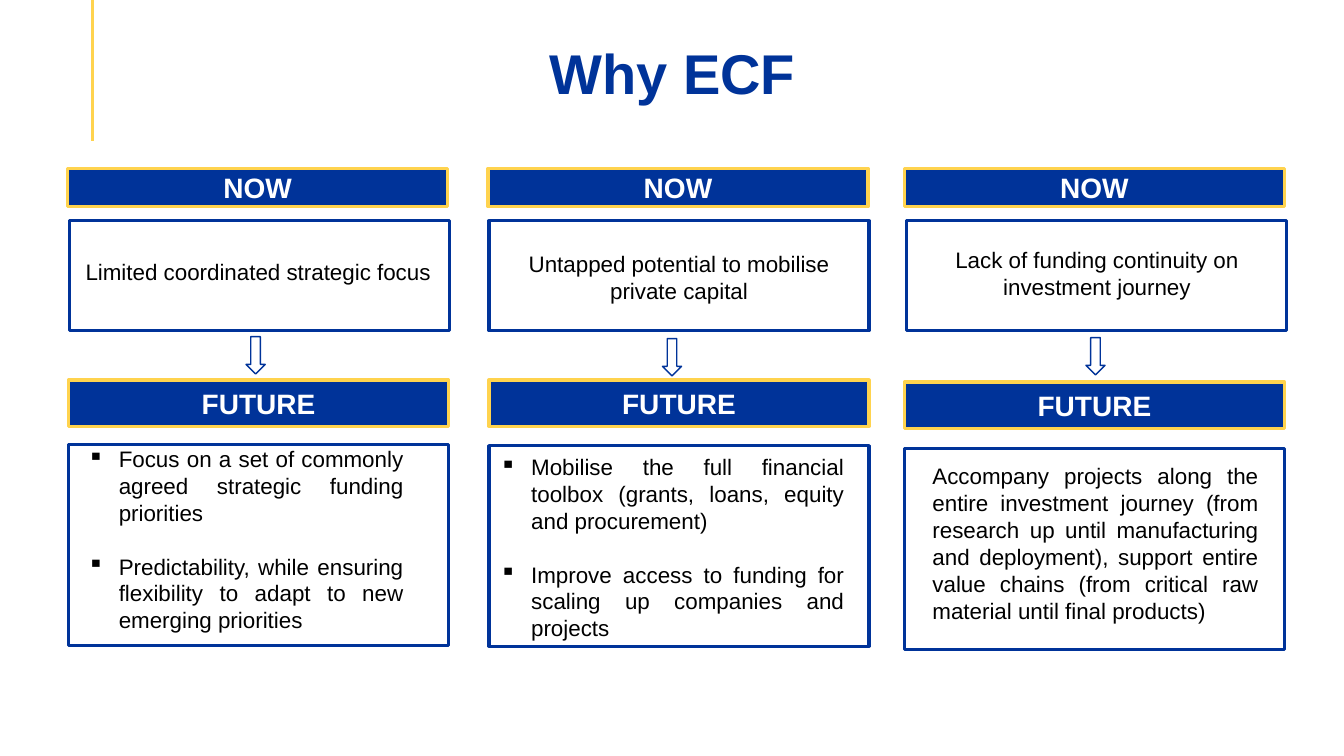
"""Build the "Why ECF" slide: three columns, each leading from now to future."""
import pptx
import pptx.util
import pptx.dml.color
import pptx.enum.shapes
import pptx.enum.text
import lxml.etree

BLUE = pptx.dml.color.RGBColor(0x00, 0x33, 0x99)
GOLD = pptx.dml.color.RGBColor(0xFF, 0xD3, 0x4E)
WHITE = pptx.dml.color.RGBColor(0xFF, 0xFF, 0xFF)
BLACK = pptx.dml.color.RGBColor(0x00, 0x00, 0x00)
RECT = pptx.enum.shapes.MSO_SHAPE.RECTANGLE
ARROW = pptx.enum.shapes.MSO_SHAPE.DOWN_ARROW
ALIGN = pptx.enum.text.PP_ALIGN
ANCHOR = pptx.enum.text.MSO_ANCHOR
FIT = pptx.enum.text.MSO_AUTO_SIZE
SCALE = 9144
WIDTH, HEIGHT = 1333, 750
BOX = 377


def px(*sizes):
    return [size * SCALE for size in sizes]


class Panel:
    def __init__(self, slide):
        self.slide = slide
        self.face = "Arial"

    def style(self, para, size, color, bold, align):
        para.alignment = align
        font = para.font
        font.name, font.size, font.bold = self.face, pptx.util.Pt(size), bold
        font.color.rgb = color

    def title(self, text, left, top, width, height):
        title = self.slide.shapes.title
        title.left, title.top, title.width, title.height = px(left, top, width, height)
        frame = title.text_frame
        frame.text = text
        frame.auto_size = FIT.NONE
        frame.vertical_anchor = ANCHOR.BOTTOM
        frame.margin_bottom = 0
        para = frame.paragraphs[0]
        para.line_spacing = 0.9
        self.style(para, 40, BLUE, True, ALIGN.LEFT)

    def rule(self, left, top, bottom):
        line = self.slide.shapes.add_connector(
            pptx.enum.shapes.MSO_CONNECTOR.STRAIGHT, *px(left, top, left, bottom))
        line.line.color.rgb = GOLD
        line.line.width = pptx.util.Pt(2.25)
        props = line._element.spPr
        lxml.etree.SubElement(props, pptx.oxml.ns.qn("a:effectLst"))

    def shape(self, kind, left, top, width, height, color=BLUE, weight=2.25):
        shape = self.slide.shapes.add_shape(kind, *px(left, top, width, height))
        shape.shadow.inherit = False
        shape.fill.background()
        shape.line.color.rgb = color
        shape.line.width = pptx.util.Pt(weight)
        return shape

    def banner(self, text, left, top, height):
        shape = self.shape(RECT, left, top, BOX, height, GOLD)
        shape.fill.solid()
        shape.fill.fore_color.rgb = BLUE
        frame = shape.text_frame
        frame.text = text
        frame.vertical_anchor = ANCHOR.MIDDLE
        self.style(frame.paragraphs[0], 20, WHITE, True, ALIGN.CENTER)

    def bullet(self, para):
        props = para._p.get_or_add_pPr()
        indent = 31 * SCALE
        props.set("marL", str(indent))
        props.set("indent", str(-indent))
        mark = lxml.etree.SubElement(props, pptx.oxml.ns.qn("a:buChar"))
        mark.set("char", "▪")

    def text(self, lines, left, top, width, height, align):
        box = self.slide.shapes.add_textbox(*px(left, top, width, height))
        frame = box.text_frame
        frame.word_wrap = True
        for rank, line in enumerate(lines):
            para = frame.paragraphs[0] if rank == 0 else frame.add_paragraph()
            para.text = line
            if rank:
                para.space_before = pptx.util.Pt(19)
            if len(lines) > 1:
                self.bullet(para)
            self.style(para, 16, BLACK, False, align)


COLUMNS = [
    {"now": 67, "next": 68, "top": 69, "base": 68, "arrow": (244, 334),
     "bar": 377, "frame": 441,
     "issue": (["Limited coordinated strategic focus"], 75, 251, 394, 37, ALIGN.LEFT),
     "goal": (["Focus on a set of commonly agreed strategic funding priorities",
               "Predictability, while ensuring flexibility to adapt to new "
               "emerging priorities"], 77, 437, 333, 199, ALIGN.JUSTIFY)},
    {"now": 484, "next": 485, "top": 485, "base": 485, "arrow": (657, 336),
     "bar": 377, "frame": 442,
     "issue": (["Untapped potential to mobilise private capital"],
               485, 243, 377, 64, ALIGN.CENTER),
     "goal": (["Mobilise the full financial toolbox (grants, loans, equity "
               "and procurement)",
               "Improve access to funding for scaling up companies and projects"],
              486, 445, 361, 199, ALIGN.JUSTIFY)},
    {"now": 897, "next": 897, "top": 899, "base": 897, "arrow": (1077, 335),
     "bar": 379, "frame": 445,
     "issue": (["Lack of funding continuity on investment journey"],
               905, 239, 366, 64, ALIGN.CENTER),
     "goal": (["Accompany projects along the entire investment journey (from "
               "research up until manufacturing and deployment), support entire "
               "value chains (from critical raw material until final products)"],
              915, 454, 343, 172, ALIGN.JUSTIFY)},
]


def main():
    deck = pptx.Presentation()
    deck.slide_width, deck.slide_height = px(WIDTH, HEIGHT)
    panel = Panel(deck.slides.add_slide(deck.slide_layouts[5]))
    panel.rule(92, 0, 140)
    panel.title("Why ECF", 535, 20, 809 - 20, 86)
    for column in COLUMNS:
        panel.banner("NOW", column["now"], 167, 38)
        panel.shape(RECT, column["top"], 219, BOX, 109)
        panel.text(*column["issue"])
        panel.shape(ARROW, *column["arrow"], 19, 37, weight=1)
        panel.banner("FUTURE", column["next"], column["bar"], 46)
        panel.shape(RECT, column["base"], column["frame"], BOX, 199)
        panel.text(*column["goal"])
    deck.save("out.pptx")


if __name__ == "__main__":
    main()
